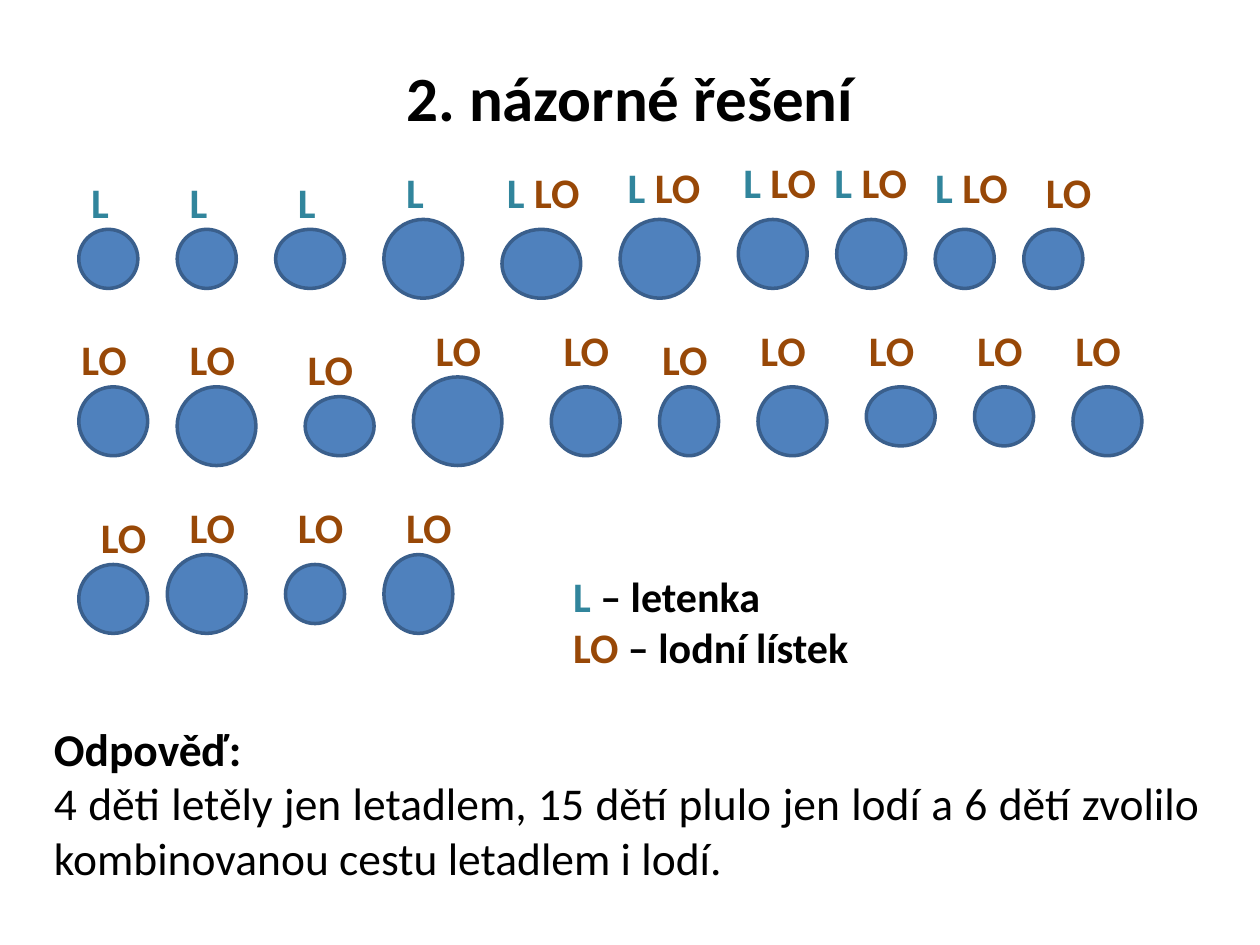
"""Build the slide that solves the ticket problem with rows of circles for children."""
from dataclasses import dataclass

from pptx import Presentation
from pptx.dml.color import RGBColor
from pptx.enum.shapes import MSO_SHAPE
from pptx.enum.text import MSO_ANCHOR, PP_ALIGN
from pptx.util import Inches, Pt


@dataclass(frozen=True)
class Theme:
    font: str = "Calibri"
    black: RGBColor = RGBColor.from_string("000000")
    flight: RGBColor = RGBColor.from_string("31859C")
    ship: RGBColor = RGBColor.from_string("984807")
    child: RGBColor = RGBColor.from_string("4F81BD")
    outline: RGBColor = RGBColor.from_string("3A5F8C")
    outline_width: Pt = Pt(2)
    title_size: Pt = Pt(36)
    answer_size: Pt = Pt(26)
    label_size: Pt = Pt(24)


@dataclass(frozen=True)
class Ticket:
    runs: tuple
    label_width: float


@dataclass(frozen=True)
class Child:
    """One circle and its label, measured in grid steps."""
    ticket: Ticket
    width: int = 6
    height: int = 6
    gap: int = 4
    drop: int = 0
    label_shift: float = 0
    label_rise: float = 6


@dataclass(frozen=True)
class Row:
    top: float
    label_height: float
    children: tuple


theme = Theme()
flight_run = ("L", theme.flight, True)
ship_run = ("LO", theme.ship, True)
flight = Ticket((flight_run,), 0.5)
ship = Ticket((ship_run,), 0.7)
both = Ticket((("L ", theme.flight, True), ship_run), 0.8)

rows = (
    Row(1.82, 0.81, (
        Child(flight),
        Child(flight),
        Child(flight, 7, 6, label_shift=1),
        Child(flight, 8, 8, drop=-1, label_shift=1),
        Child(both, 8, 7, label_shift=-0.75, label_rise=7),
        Child(both, 8, 8, drop=-1, label_shift=-0.5, label_rise=6.5),
        Child(both, 7, 7, drop=-1, label_shift=-0.75, label_rise=7),
        Child(both, 7, 7, gap=3, drop=-1, label_shift=-1.5, label_rise=7),
        Child(both, gap=3, label_shift=-1.25, label_rise=7.5),
        Child(ship, gap=3, label_shift=1, label_rise=7),
    )),
    Row(3.07, 0.51, (
        Child(ship, 7, 7, label_shift=-1),
        Child(ship, 8, 8, gap=3),
        Child(ship, 7, 6, gap=5, drop=1, label_shift=-1),
        Child(ship, 9, 9, drop=-1, label_shift=1),
        Child(ship, 7, 7, gap=5, label_rise=7),
        Child(ship, 6, 7, label_shift=-1),
        Child(ship, 7, 7, label_shift=-1, label_rise=7),
        Child(ship, 7, 6, label_shift=-1, label_rise=7),
        Child(ship, label_shift=-1, label_rise=7),
        Child(ship, 7, 7, label_shift=-1, label_rise=7),
    )),
    Row(4.48, 0.81, (
        Child(ship, 7, 7, label_shift=1),
        Child(ship, 8, 8, gap=2, drop=-1, label_shift=1),
        Child(ship, label_rise=7),
        Child(ship, 7, 8, drop=-1, label_shift=1),
    )),
)

slide_width, slide_height = 10, 7.5
step = slide_width / 128
first_left = 8 * step

presentation = Presentation()
presentation.slide_width = Inches(slide_width)
presentation.slide_height = Inches(slide_height)
slide = presentation.slides.add_slide(presentation.slide_layouts[6])


def add_text(box, lines, size, align=PP_ALIGN.LEFT):
    frame = slide.shapes.add_textbox(*map(Inches, box)).text_frame
    frame.word_wrap = True
    for number, line in enumerate(lines):
        paragraph = frame.add_paragraph() if number else frame.paragraphs[0]
        paragraph.alignment = align
        for text, color, bold in line:
            run = paragraph.add_run()
            run.text = text
            run.font.name = theme.font
            run.font.size = size
            run.font.bold = bold
            run.font.color.rgb = color
    return frame


def add_circle(left, top, width, height):
    circle = slide.shapes.add_shape(MSO_SHAPE.OVAL, *map(Inches, (left, top, width, height)))
    circle.shadow.inherit = False
    circle.fill.solid()
    circle.fill.fore_color.rgb = theme.child
    circle.line.color.rgb = theme.outline
    circle.line.width = theme.outline_width


title = add_text((0.5, 0.3, 9, 0.93), [[("2. názorné řešení", theme.black, True)]],
                 theme.title_size, PP_ALIGN.CENTER)
title.vertical_anchor = MSO_ANCHOR.MIDDLE

for row in rows:
    left = first_left - row.children[0].gap * step
    for child in row.children:
        left += child.gap * step
        top = row.top + child.drop * step
        add_circle(left, top, child.width * step, child.height * step)
        label_box = (left + child.label_shift * step, top - child.label_rise * step,
                     child.ticket.label_width, row.label_height)
        label = add_text(label_box, [child.ticket.runs], theme.label_size)
        label.margin_right = 0
        left += child.width * step

add_text((4.45, 4.48, 3.2, 0.91), [
    [flight_run, (" – letenka", theme.black, True)],
    [ship_run, (" – lodní lístek", theme.black, True)],
], theme.label_size)

add_text((0.33, 5.67, 9.3, 1.41), [
    [("Odpověď:", theme.black, True)],
    [("4 děti letěly jen letadlem, 15 dětí plulo jen lodí a 6 dětí zvolilo "
      "kombinovanou cestu letadlem i lodí.", theme.black, False)],
], theme.answer_size, PP_ALIGN.JUSTIFY)

presentation.save("out.pptx")
